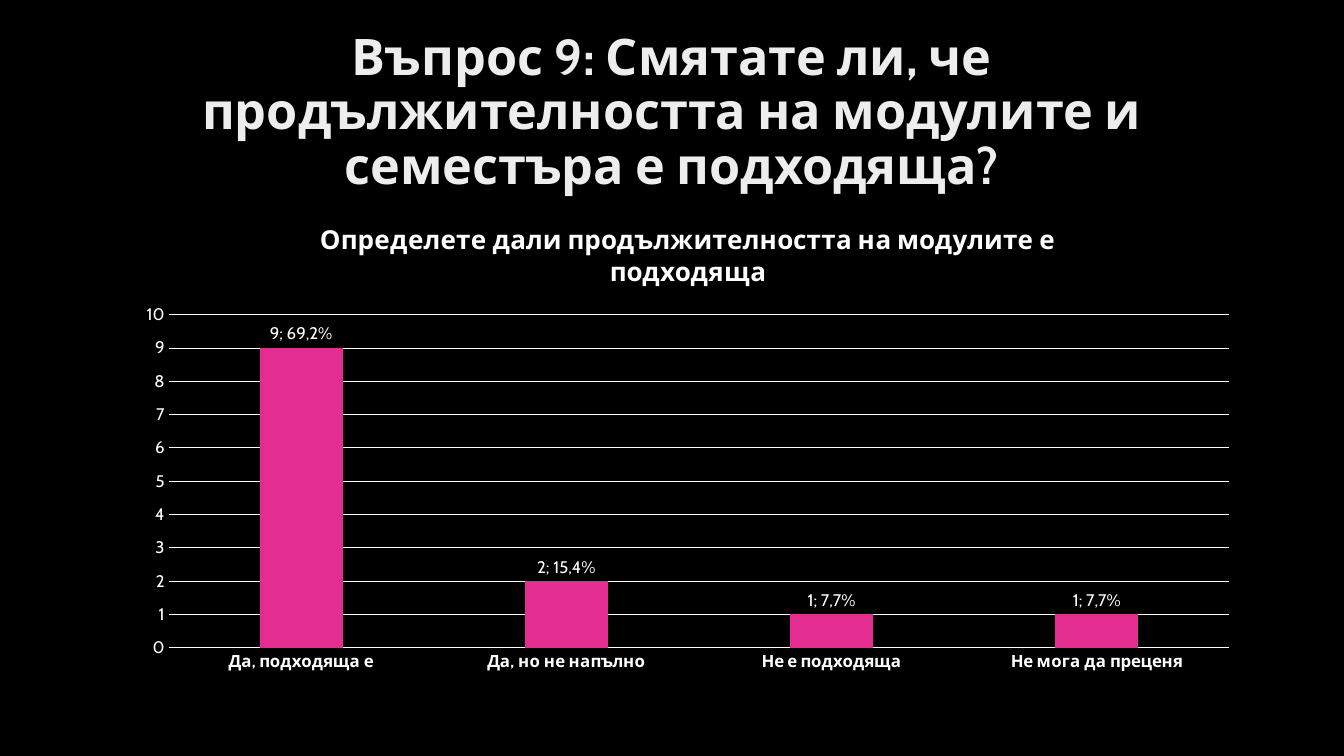
from pptx import Presentation
from pptx.chart.data import CategoryChartData
from pptx.dml.color import RGBColor
from pptx.enum.chart import XL_CHART_TYPE, XL_LABEL_POSITION, XL_TICK_MARK
from pptx.enum.text import MSO_ANCHOR, PP_ALIGN
from pptx.util import Pt

COLUMNS = XL_CHART_TYPE.COLUMN_CLUSTERED
OUTSIDE_END = XL_LABEL_POSITION.OUTSIDE_END
NO_TICK = XL_TICK_MARK.NONE
MIDDLE = MSO_ANCHOR.MIDDLE
CENTER = PP_ALIGN.CENTER

BLACK = RGBColor(0x00, 0x00, 0x00)
WHITE = RGBColor(0xFF, 0xFF, 0xFF)
LIGHT_GREY = RGBColor(0xED, 0xED, 0xED)
PINK = RGBColor(0xE3, 0x2D, 0x91)
FONT = "Cabin"

QUESTION = ("Въпрос 9: Смятате ли, че продължителността на модулите "
            "и семестъра е подходяща?")
CHART_TITLE = "Определете дали продължителността на модулите е подходяща"
# Answer, number of votes, label above the column
ANSWERS = [
    ("Да, подходяща е", 9, "9; 69,2%"),
    ("Да, но не напълно", 2, "2; 15,4%"),
    ("Не е подходяща", 1, "1; 7,7%"),
    ("Не мога да преценя", 1, "1; 7,7%"),
]


def style_font(font, size, color=WHITE, bold=False):
    font.name = FONT
    font.size = Pt(size)
    font.bold = bold
    font.color.rgb = color


def style_line(line):
    line.color.rgb = WHITE
    line.width = Pt(0.75)


def fill_title(title):
    title.left, title.top = Pt(66), Pt(28.75)
    title.width, title.height = Pt(828), Pt(104.4)
    frame = title.text_frame
    frame.text = QUESTION
    frame.word_wrap = True
    frame.vertical_anchor = MIDDLE
    para = frame.paragraphs[0]
    para.alignment = CENTER
    para.line_spacing = 0.9
    style_font(para.runs[0].font, 36, LIGHT_GREY, bold=True)


def style_axes(chart):
    answer_axis, vote_axis = chart.category_axis, chart.value_axis
    for axis, bold in ((answer_axis, True), (vote_axis, False)):
        axis.major_tick_mark = axis.minor_tick_mark = NO_TICK
        style_font(axis.tick_labels.font, 12, bold=bold)
    style_line(answer_axis.format.line)
    vote_axis.format.line.fill.background()
    style_line(vote_axis.major_gridlines.format.line)
    vote_axis.minimum_scale, vote_axis.maximum_scale = 0, 10
    vote_axis.major_unit = 1


def label_columns(series):
    labels = series.data_labels
    labels.show_value = True
    labels.position = OUTSIDE_END
    style_font(labels.font, 12)
    for index, (_, _, text) in enumerate(ANSWERS):
        label = series.points[index].data_label
        label.text_frame.text = text
        style_font(label.text_frame.paragraphs[0].runs[0].font, 12)
        label.position = OUTSIDE_END


def add_answer_chart(slide):
    data = CategoryChartData(number_format="0")
    data.categories = [answer for answer, _, _ in ANSWERS]
    data.add_series(CHART_TITLE, [votes for _, votes, _ in ANSWERS])
    chart = slide.shapes.add_chart(
        COLUMNS, Pt(88.6), Pt(144), Pt(805.7), Pt(342.7), data).chart
    style_font(chart.font, 10)
    chart.has_legend = False

    # Chart title
    chart.has_title = True
    title_frame = chart.chart_title.text_frame
    title_frame.text = CHART_TITLE
    style_font(title_frame.paragraphs[0].runs[0].font, 18.6, bold=True)
    chart.chart_title.include_in_layout = False

    # Columns
    plot = chart.plots[0]
    plot.vary_by_categories = False
    plot.gap_width, plot.overlap = 219, -27
    series = plot.series[0]
    series.format.fill.solid()
    series.format.fill.fore_color.rgb = PINK
    label_columns(series)
    style_axes(chart)


def main():
    deck = Presentation()
    deck.slide_width, deck.slide_height = Pt(960), Pt(540)
    title_only = deck.slide_layouts[5]
    slide = deck.slides.add_slide(title_only)
    slide.background.fill.solid()
    slide.background.fill.fore_color.rgb = BLACK
    fill_title(slide.shapes.title)
    add_answer_chart(slide)
    deck.save("out.pptx")


if __name__ == "__main__":
    main()
